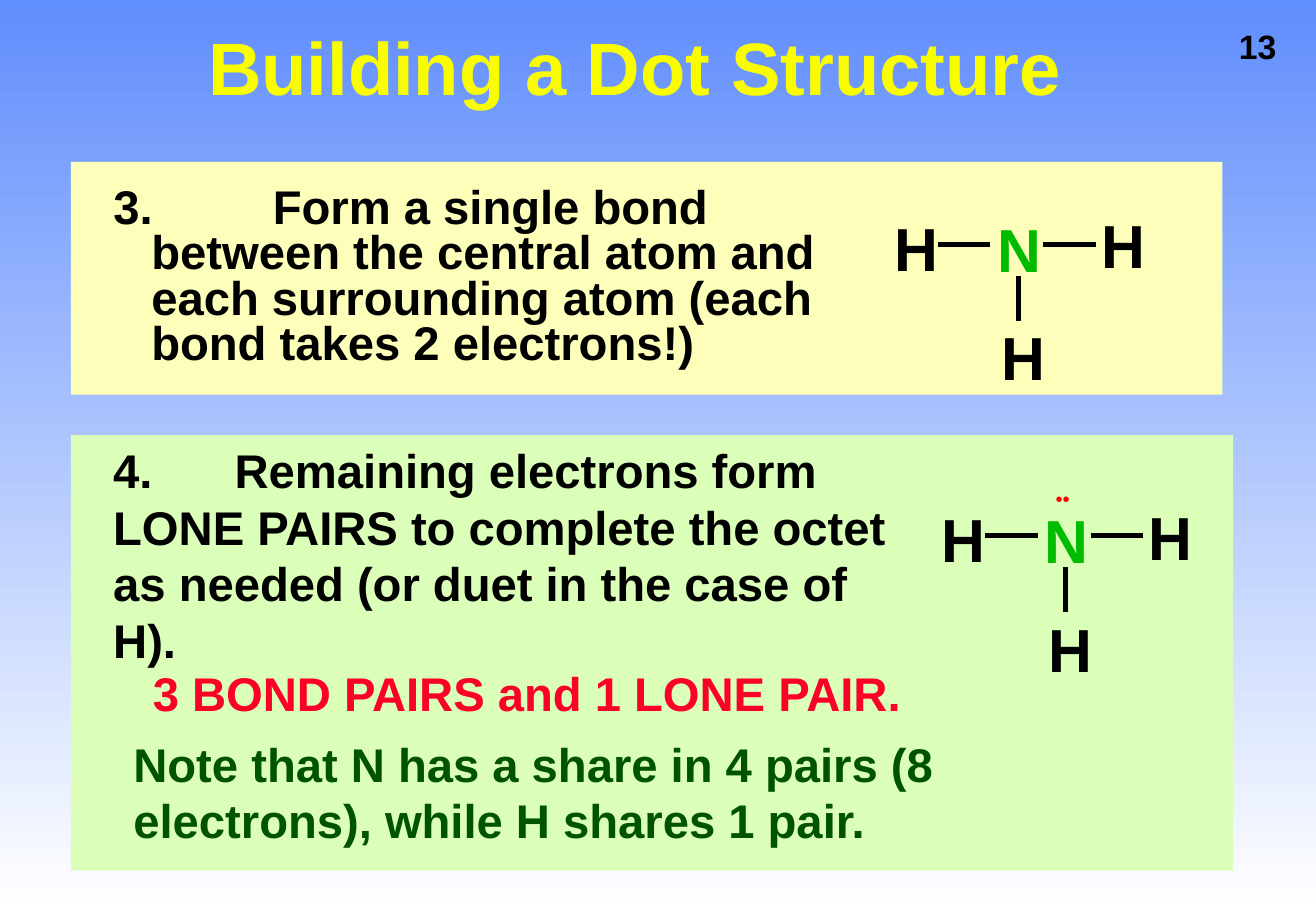
from lxml import etree
from pptx import Presentation
from pptx.dml.color import RGBColor
from pptx.enum.shapes import MSO_CONNECTOR, MSO_SHAPE
from pptx.enum.text import MSO_ANCHOR, MSO_AUTO_SIZE, PP_ALIGN
from pptx.oxml.ns import qn
from pptx.util import Pt

LINE = MSO_CONNECTOR.STRAIGHT
RECT = MSO_SHAPE.RECTANGLE
TOP, MIDDLE = MSO_ANCHOR.TOP, MSO_ANCHOR.MIDDLE
FIXED, GROW = MSO_AUTO_SIZE.NONE, MSO_AUTO_SIZE.SHAPE_TO_FIT_TEXT
LEFT, CENTER = PP_ALIGN.LEFT, PP_ALIGN.CENTER

BLACK = RGBColor(0x00, 0x00, 0x00)
WHITE = RGBColor(0xFF, 0xFF, 0xFF)
BLUE = RGBColor(0x61, 0x8E, 0xFD)
YELLOW = RGBColor(0xFA, 0xFD, 0x00)
CREAM = RGBColor(0xFC, 0xFE, 0xB9)
LIME = RGBColor(0xDB, 0xFF, 0xB8)
GREEN = RGBColor(0x00, 0xBB, 0x00)
FOREST = RGBColor(0x00, 0x54, 0x00)
CRIMSON = RGBColor(0xFC, 0x01, 0x28)
RED = RGBColor(0xFF, 0x00, 0x00)


def place(shape, box):
    """Move a shape to a box given in points."""
    shape.left, shape.top, shape.width, shape.height = map(Pt, box)


def write(shape, text, size, color, bold=True, align=LEFT):
    """Write one styled run and return its paragraph."""
    para = shape.text_frame.paragraphs[0]
    para.alignment = align
    para._p.get_or_add_pPr().set("defTabSz", str(Pt(72)))
    run = para.add_run()
    run.text = text
    font = run.font
    font.name, font.size, font.bold = "Arial", Pt(size), bold
    font.color.rgb = color
    return para


def label(shapes, box, text, size, color, bold=True, wrap=False, inset=(0, 0)):
    """Add a text box that grows with its text."""
    shape = shapes.add_textbox(*map(Pt, box))
    frame = shape.text_frame
    frame.word_wrap, frame.auto_size = wrap, GROW
    frame.margin_left = frame.margin_right = Pt(inset[0])
    frame.margin_top = frame.margin_bottom = Pt(inset[1])
    write(shape, text, size, color, bold)


def panel(slide, box, color):
    """Add a plain coloured panel."""
    shape = slide.shapes.add_shape(RECT, *map(Pt, box))
    shape.shadow.inherit = False
    shape.fill.solid()
    shape.fill.fore_color.rgb = color
    shape.line.fill.background()


def bond(shapes, x1, y1, x2, y2):
    """Draw one bond line."""
    line = shapes.add_connector(LINE, Pt(x1), Pt(y1), Pt(x2), Pt(y2))
    line.line.color.rgb = BLACK
    line.line.width = Pt(3)
    etree.SubElement(line._element.spPr, qn("a:effectLst"))


def ammonia(slide, left, top, paired=False):
    """Draw N with three bonded H atoms from a top left corner."""
    shapes = slide.shapes.add_group_shape().shapes
    atoms = [("H", 0, 1.4, BLACK), ("H", 123, 0, BLACK),
             ("H", 63.4, 66.5, BLACK), ("N", 61, 2.2, GREEN)]
    for name, x, y, color in atoms:
        label(shapes, (left + x, top + y, 26, 43), name, 36, color)
    bonds = [(26, 21.6, 57, 21.6), (88.5, 21.6, 119.5, 21.6), (73.8, 40.3, 73.8, 67)]
    for x1, y1, x2, y2 in bonds:
        bond(shapes, left + x1, top + y1, left + x2, top + y2)
    if paired:
        label(shapes, (left + 67.7, top - 8, 8.6, 14.4), "••", 12, RED, bold=False)


def header(slide, box):
    """Fill the title and add the page number to its right."""
    left, top, width, height = box
    title = slide.shapes.title
    place(title, box)
    frame = title.text_frame
    frame.vertical_anchor, frame.auto_size = MIDDLE, FIXED
    write(title, "Building a Dot Structure", 44, YELLOW, align=CENTER).line_spacing = 0.9
    label(slide.shapes, (left + width + 45.4, top - 0.7, 39, 31), "13", 20, BLACK,
          inset=(7.2, 3.6))


def bonding(slide, box):
    """Build step three: its panel, list text and molecule."""
    left, top, width, height = box
    panel(slide, box, CREAM)
    body = slide.placeholders[1]
    slide.shapes._spTree.append(body._element)
    place(body, (left + 18, top + 12, 432, 108))
    frame = body.text_frame
    frame.vertical_anchor, frame.auto_size = TOP, FIXED
    para = write(body, "3.\tForm a single bond between the central atom and "
                 "each surrounding atom (each bond takes 2 electrons!)", 28, BLACK)
    para.line_spacing, para.space_before = 0.8, Pt(0)
    props = para._p.pPr
    props.set("marL", str(Pt(22.5)))
    props.set("indent", str(Pt(-22.5)))
    etree.SubElement(props, qn("a:buNone"))
    ammonia(slide, left + 488, top + 27.3)


def pairing(slide, box):
    """Build step four: its panel, molecule and three notes."""
    left, top, width, height = box
    panel(slide, box, LIME)
    ammonia(slide, left + 516, top + 38, paired=True)
    notes = [
        (18, 0, 492, 142, "4.\tRemaining electrons form LONE PAIRS to complete "
         "the octet as needed (or duet in the case of H).", BLACK),
        (41.5, 132.5, 468, 41, "3 BOND PAIRS and 1 LONE PAIR.", CRIMSON),
        (30, 174, 612, 74, "Note that N has a share in 4 pairs (8 electrons), "
         "while H shares 1 pair.", FOREST),
    ]
    for x, y, wide, high, text, color in notes:
        label(slide.shapes, (left + x, top + y, wide, high), text, 28, color,
              wrap=True, inset=(7.2, 3.6))


def backdrop(slide):
    """Shade the slide from blue down to white."""
    fill = slide.background.fill
    fill.gradient()
    fill.gradient_angle = 270
    for stop, color, spot in zip(fill.gradient_stops, (BLUE, WHITE), (0, 1)):
        stop.color.rgb = color
        stop.position = spot


def main():
    """Build the slide and save it."""
    deck = Presentation()
    deck.slide_width, deck.slide_height = Pt(780), Pt(540)
    slide = deck.slides.add_slide(deck.slide_layouts[1])
    backdrop(slide)
    header(slide, (71.3, 12.2, 610.5, 60))
    bonding(slide, (42, 96, 682.5, 138))
    pairing(slide, (42, 258, 689, 258))
    deck.save("out.pptx")


if __name__ == "__main__":
    main()
